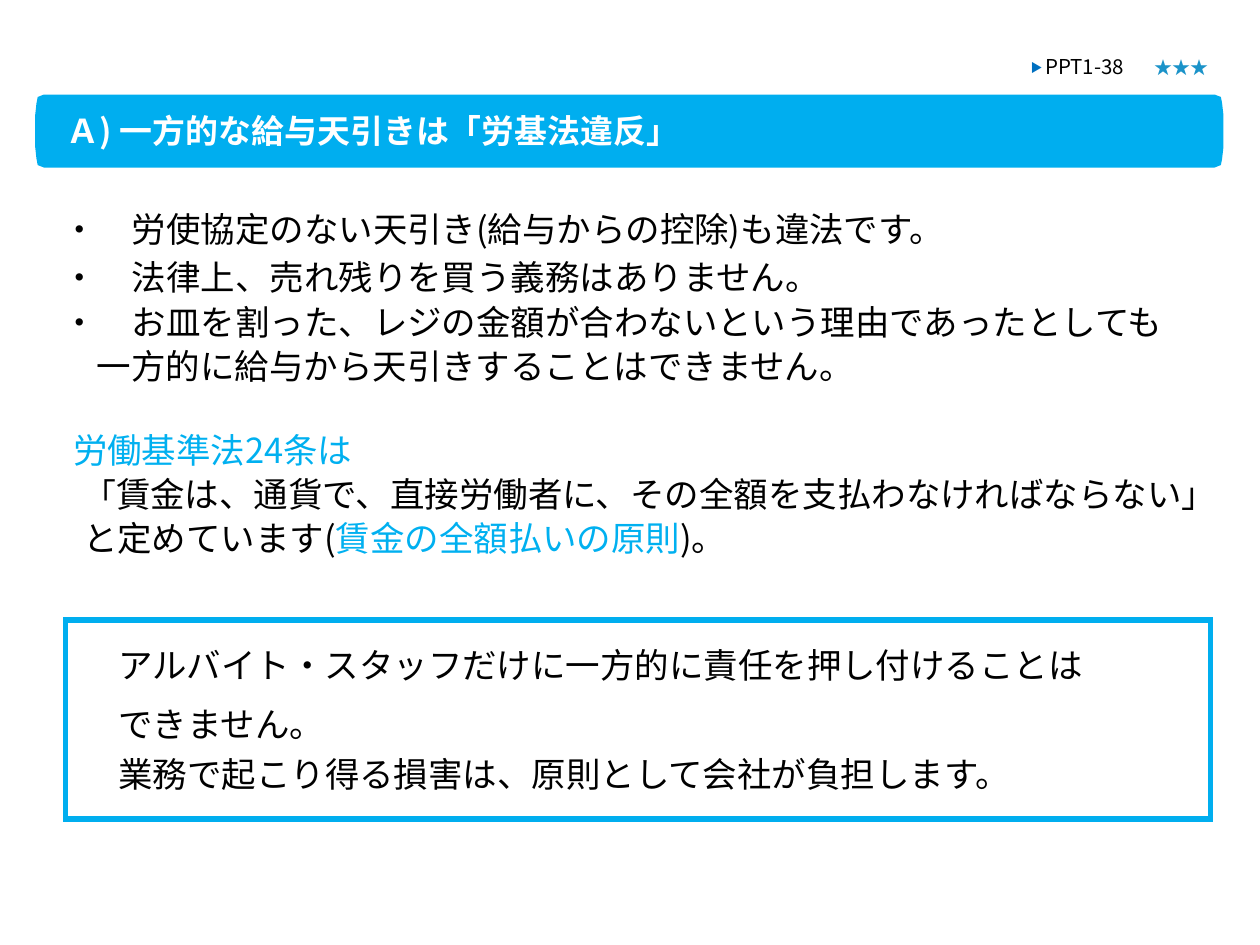
from pptx import Presentation
from pptx.dml.color import RGBColor
from pptx.enum.shapes import MSO_SHAPE
from pptx.enum.text import MSO_ANCHOR, PP_ALIGN
from pptx.oxml.ns import qn
from pptx.util import Inches, Pt

FONT = "Noto Sans CJK JP"
LINE_RATIO = 1.2
BODY = 19.7
BLACK, WHITE = "000000", "FFFFFF"
BANNER_BLUE, TEXT_BLUE = "00AEEF", "00B0F0"


def color(hex_value):
    return RGBColor.from_string(hex_value)


def prepare_frame(frame, top_inset=0.0, wrap=True):
    frame.word_wrap = wrap
    frame.vertical_anchor = MSO_ANCHOR.TOP
    frame.margin_left = frame.margin_right = frame.margin_bottom = 0
    frame.margin_top = Inches(top_inset)


def add_run(paragraph, text, hex_value=BLACK, size=BODY, bold=False):
    run = paragraph.add_run()
    run.text = text
    run.font.size = Pt(size)
    run.font.bold = bold
    run.font.name = FONT
    run.font.color.rgb = color(hex_value)
    east_asian = run.font._element.makeelement(qn("a:ea"), {"typeface": FONT})
    run.font._element.find(qn("a:latin")).addnext(east_asian)


def format_paragraph(paragraph, size=BODY, before=0, left=0.01):
    paragraph.alignment = PP_ALIGN.LEFT
    paragraph.line_spacing = Pt(round(size * LINE_RATIO, 1))
    paragraph.space_before = Pt(before)
    paragraph._p.get_or_add_pPr().set("marL", str(Inches(left)))


def add_text(slide, box, paragraphs, top_inset=0.0, wrap=True):
    """Each paragraph is (space before, left indent, [run arguments])."""
    frame = slide.shapes.add_textbox(*map(Inches, box)).text_frame
    prepare_frame(frame, top_inset, wrap)
    for number, (before, left, runs) in enumerate(paragraphs):
        paragraph = frame.paragraphs[0] if number == 0 else frame.add_paragraph()
        for run in runs:
            add_run(paragraph, *run)
        format_paragraph(paragraph, runs[-1][2] if len(runs[-1]) > 2 else BODY,
                         before, left)
    return frame


def add_banner(slide, left, top, width, height):
    """Bar with softened corners, mirrored from one corner; hundredths of an inch."""
    corner = [(17, 0), (7, 0), (2, 2), (1, 7), (0, 16)]
    right, bottom = left + width, top + height
    outline = [(left + x, top + y) for x, y in corner]
    outline += [(left + x, bottom - y) for x, y in reversed(corner)]
    outline += [(right - x, bottom - y) for x, y in corner]
    outline += [(right - x, top + y) for x, y in reversed(corner)]
    builder = slide.shapes.build_freeform(*outline[0], scale=Inches(0.01))
    builder.add_line_segments(outline[1:], close=True)
    banner = builder.convert_to_shape()
    banner.shadow.inherit = False
    banner.fill.solid()
    banner.fill.fore_color.rgb = color(BANNER_BLUE)
    banner.line.fill.background()
    return banner


def set_title(slide, banner, text):
    title = slide.shapes.title
    title.left, title.top, title.width, title.height = map(
        Inches, (0.52, 0.86, 6.81, 0.33))
    prepare_frame(title.text_frame, 0.02)
    paragraph = title.text_frame.paragraphs[0]
    add_run(paragraph, text, WHITE, 18.8, True)
    format_paragraph(paragraph, 18.8)
    banner._element.addnext(title._element)  # title in front of the banner


def add_frame(slide, box):
    frame = slide.shapes.add_shape(MSO_SHAPE.RECTANGLE, *map(Inches, box))
    frame.shadow.inherit = False
    frame.fill.background()
    frame.line.color.rgb = color(BANNER_BLUE)
    frame.line.width = Pt(3)
    outline = frame.line._get_or_add_ln()
    outline.append(outline.makeelement(qn("a:miter"), {"lim": "800000"}))


def main():
    deck = Presentation()
    deck.slide_width, deck.slide_height = Inches(10), Inches(7.5)
    slide = deck.slides.add_slide(deck.slide_layouts[5])

    # Heading
    banner = add_banner(slide, 28, 75, 943, 58)
    set_title(slide, banner, "Ａ) 一方的な給与天引きは「労基法違反」")

    # Rules and the article of the law
    add_text(slide, (0.48, 1.58, 9.44, 3.24), [
        (0, 0.02, [("・　労使協定のない天引き(給与からの控除)も違法です。",)]),
        (4.1, 0.02, [("・　法律上、売れ残りを買う義務はありません。",)]),
        (1.8, 0.02, [("・　お皿を割った、レジの金額が合わないという理由であったとしても",)]),
        (1.8, 0.29, [("一方的に給与から天引きすることはできません。",)]),
        (24, 0.1, [("労働基準法24条は", TEXT_BLUE)]),
        (1.7, 0.18, [("「", BLACK, 18.8),
                     ("賃金は、通貨で、直接労働者に、その全額を支払わなければならない」",)]),
        (1.7, 0.18, [("と定めています(",), ("賃金の全額払いの原則", TEXT_BLUE), (")。",)]),
    ], top_inset=0.07)

    # Framed conclusion
    add_text(slide, (0.38, 5.03, 9.23, 1.29), [
        (0, 0.56, [("アルバイト・スタッフだけに一方的に責任を押し付けることは",)]),
        (10.3, 0.56, [("できません。",)]),
        (5.1, 0.56, [("業務で起こり得る損害は、原則として会社が負担します。",)]),
    ], top_inset=0.08)
    add_frame(slide, (0.52, 4.92, 9.09, 1.58))

    # Page reference and rating
    reference = add_text(slide, (8.17, 0.41, 0.99, 0.21), [
        (0, 0.01, [("▶ ", "0070C0", 11.7), ("PPT1-38", BLACK, 11.7)]),
    ], top_inset=0.02)
    marker = reference.paragraphs[0].runs[0]
    marker.font._element.set("baseline", "9000")
    add_text(slide, (9.16, 0.45, 0.43, 0.17), [
        (0, 0, [("★★★", "1B93C9", 10.3)]),
    ], wrap=False)

    deck.save("out.pptx")


if __name__ == "__main__":
    main()
